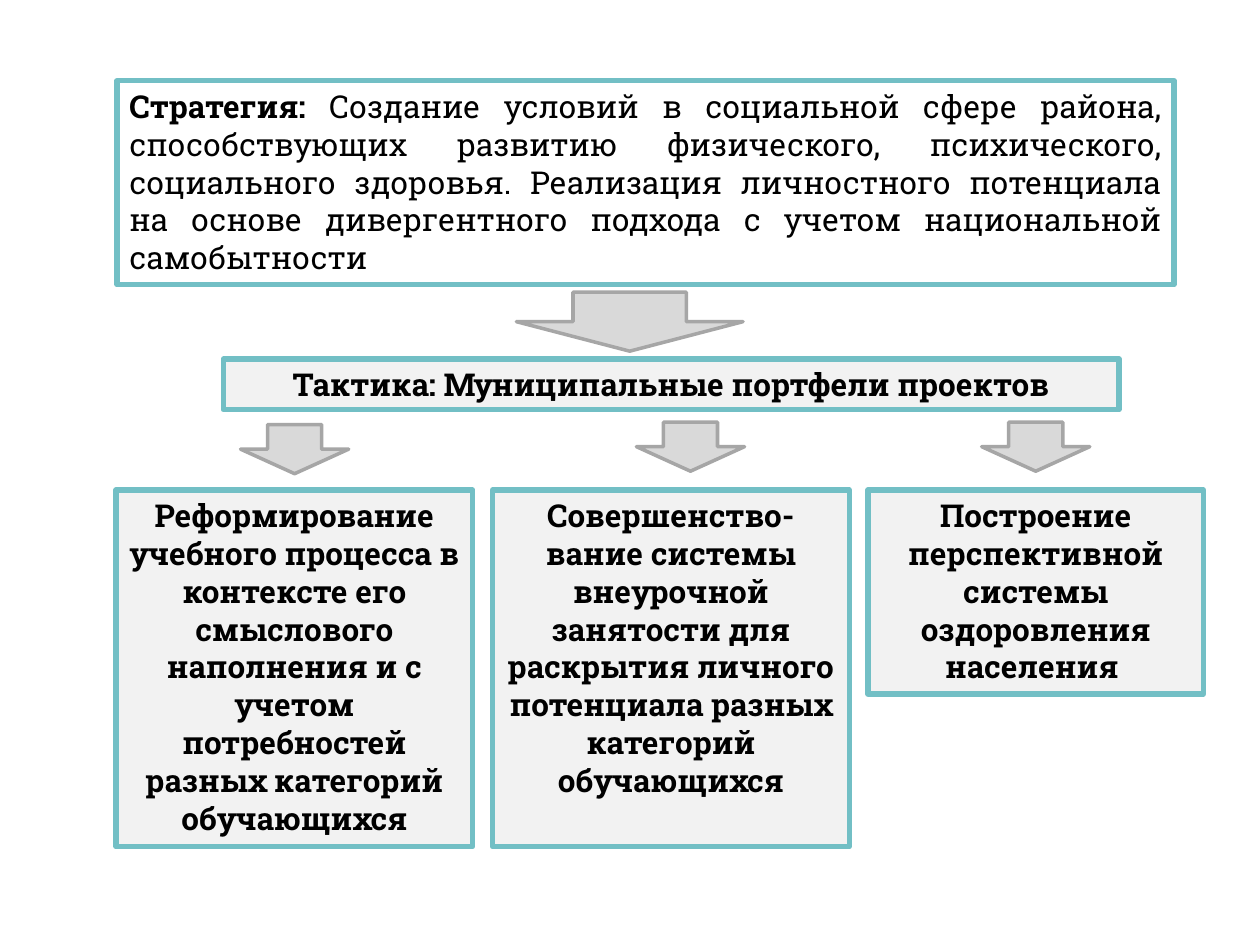
import pptx
import pptx.util
from pptx.dml.color import RGBColor
from pptx.enum.shapes import MSO_SHAPE
from pptx.enum.text import MSO_ANCHOR, MSO_AUTO_SIZE, PP_ALIGN

Cm, Pt = pptx.util.Cm, pptx.util.Pt

COLORS = {
    "text": "000000",
    "teal": "72BFC5",
    "panel": "F2F2F2",
    "arrow": "D9D9D9",
    "arrow_line": "A6A6A6",
}
FONT = {"name": "Roboto Slab", "size": Pt(18)}
FRAME = {
    "word_wrap": True,
    "auto_size": MSO_AUTO_SIZE.SHAPE_TO_FIT_TEXT,
    "vertical_anchor": MSO_ANCHOR.TOP,
}

STRATEGY = [
    ("Стратегия: ", True),
    ("Создание условий в социальной сфере района, способствующих развитию "
     "физического, психического, социального здоровья. Реализация личностного "
     "потенциала на основе дивергентного подхода с учетом национальной "
     "самобытности ", False),
]
TACTICS = "Тактика: Муниципальные портфели проектов"
CARD_TOP = 9.88
PROJECTS = [
    (2.34, 7.19, 7.19,
     "Реформирование учебного процесса в контексте его смыслового наполнения "
     "и с учетом потребностей разных категорий обучающихся"),
    (9.93, 7.19, 7.19,
     "Совершенство-вание системы внеурочной занятости для раскрытия личного "
     "потенциала разных категорий обучающихся"),
    (17.5, 6.76, 4.11,
     "Построение перспективной системы оздоровления населения "),
]
ARROWS = [
    (10.41, 5.89, 4.57, 1.19),
    (4.85, 8.56, 2.18, 0.99),
    (12.83, 8.51, 2.18, 0.99),
    (19.79, 8.51, 2.18, 0.99),
]


def rgb(key):
    return RGBColor.from_string(COLORS[key])


def set_attrs(obj, values):
    for name, value in values.items():
        setattr(obj, name, value)


def add_shape(s, kind, box, fill, line, width):
    sp = s.shapes.add_shape(kind, *(Cm(v) for v in box))
    sp.shadow.inherit = False
    if fill:
        sp.fill.solid()
        sp.fill.fore_color.rgb = rgb(fill)
    else:
        sp.fill.background()
    sp.line.color.rgb = rgb(line)
    sp.line.width = Pt(width)
    return sp


def add_panel(s, box, runs, fill="panel", align=PP_ALIGN.CENTER):
    sp = add_shape(s, MSO_SHAPE.RECTANGLE, box, fill, "teal", 3)
    tf = sp.text_frame
    set_attrs(tf, FRAME)
    p = tf.paragraphs[0]
    p.alignment = align
    for text, bold in runs:
        r = p.add_run()
        r.text = text
        set_attrs(r.font, {**FONT, "bold": bold})
        r.font.color.rgb = rgb("text")


def add_arrow(s, box):
    add_shape(s, MSO_SHAPE.DOWN_ARROW, box, "arrow", "arrow_line", 2)


def main():
    prs = pptx.Presentation()
    set_attrs(prs, {"slide_width": Cm(25.4), "slide_height": Cm(19.05)})
    s = prs.slides.add_slide(prs.slide_layouts[6])
    add_panel(s, (2.36, 1.63, 21.31, 4.11), STRATEGY, None, PP_ALIGN.JUSTIFY)
    for left, width, height, text in PROJECTS:
        add_panel(s, (left, CARD_TOP, width, height), [(text, True)])
    add_panel(s, (4.5, 7.24, 18.06, 1.02), [(TACTICS, True)])
    for box in ARROWS:
        add_arrow(s, box)
    prs.save("out.pptx")


if __name__ == "__main__":
    main()
